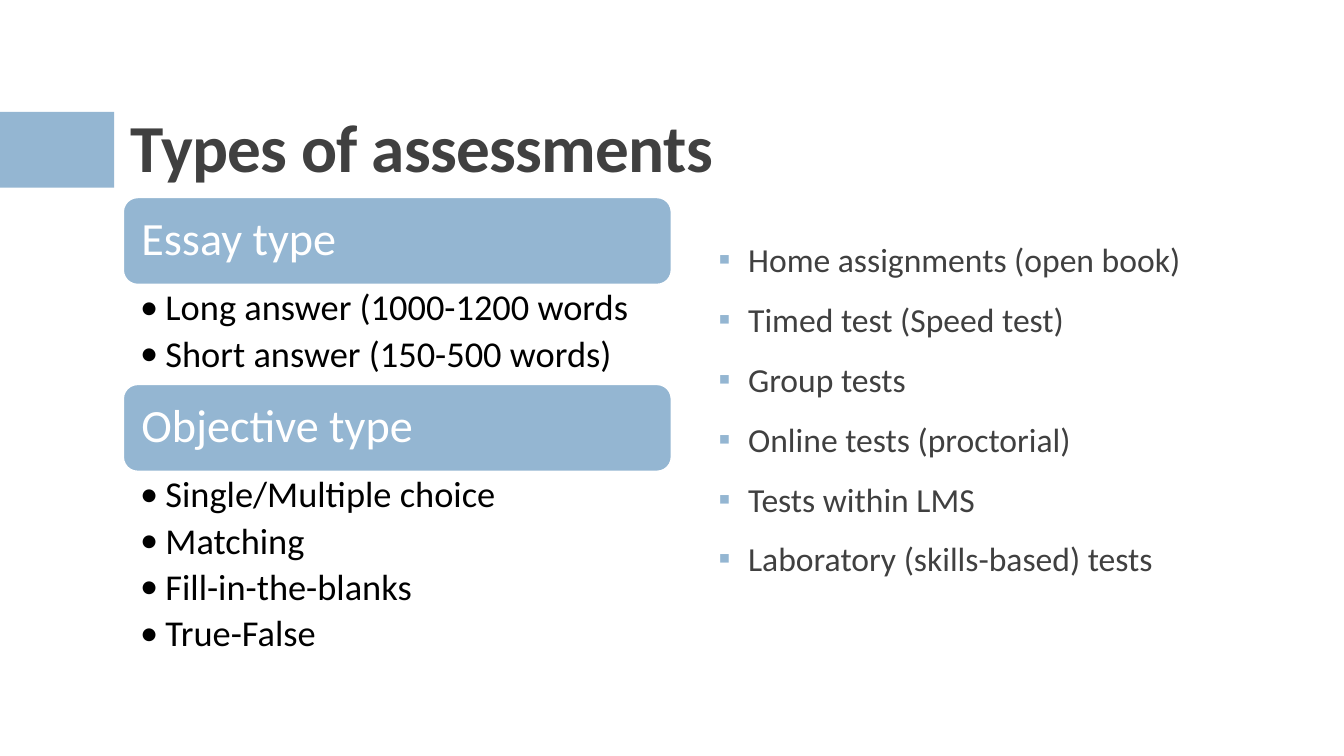
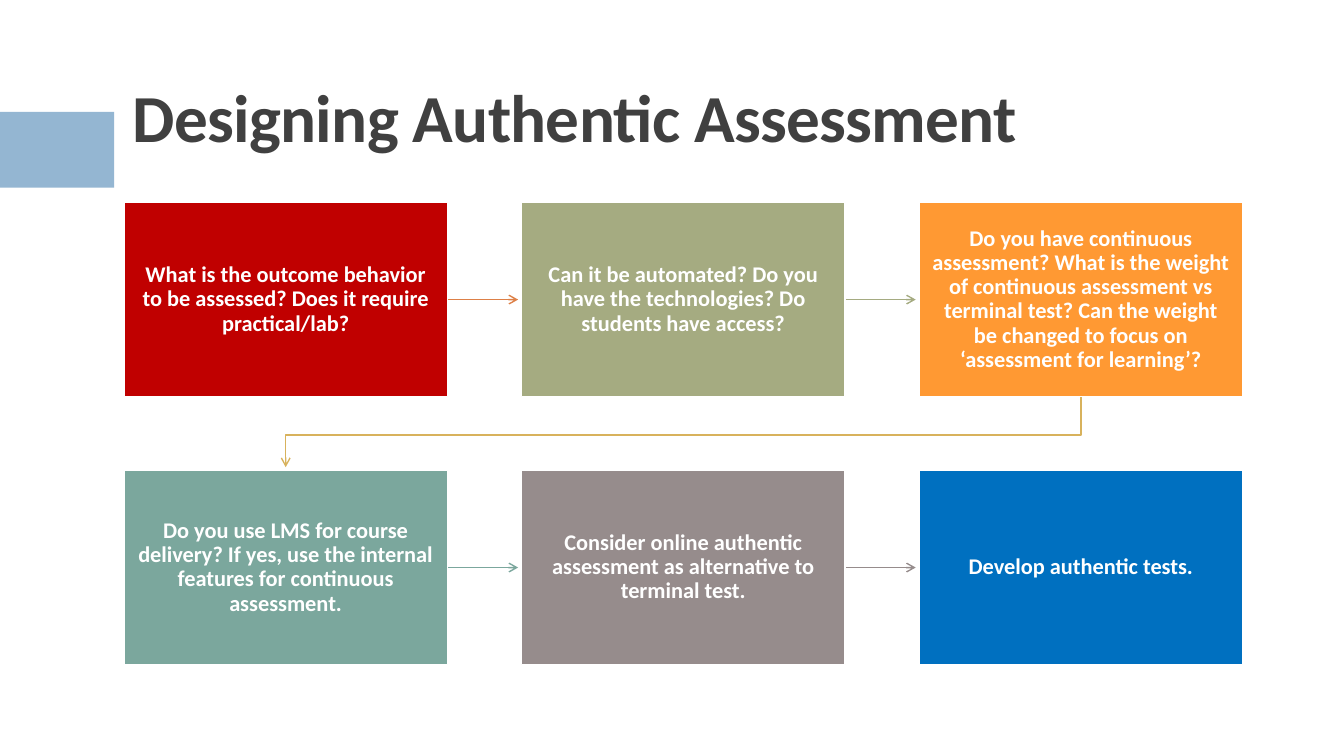
from pptx import Presentation
from pptx.dml.color import RGBColor
from pptx.enum.shapes import MSO_CONNECTOR, MSO_SHAPE
from pptx.enum.text import MSO_ANCHOR, PP_ALIGN
from pptx.oxml.ns import qn
from pptx.util import Pt
from lxml.etree import SubElement

WHITE = RGBColor(0xFF, 0xFF, 0xFF)
BLACK = RGBColor(0x00, 0x00, 0x00)
DARK = RGBColor(0x40, 0x40, 0x40)
BLUE = RGBColor(0x94, 0xB6, 0xD2)
RED = RGBColor(0xC0, 0x00, 0x00)
RUST = RGBColor(0xDD, 0x80, 0x47)
OLIVE = RGBColor(0xA5, 0xAB, 0x81)
ORANGE = RGBColor(0xFF, 0x99, 0x33)
GOLD = RGBColor(0xD8, 0xB2, 0x5C)
TEAL = RGBColor(0x7B, 0xA7, 0x9D)
GREY = RGBColor(0x96, 0x8C, 0x8C)
ROYAL = RGBColor(0x00, 0x70, 0xC0)


class Deck:
    font = "Calibri"

    def __init__(self):
        self.prs = Presentation()
        self.prs.slide_width, self.prs.slide_height = Pt(960), Pt(540)
        self.slide = None

    def page(self, title, left, top, width, height):
        """Start a slide with the side band and a title."""
        self.slide = self.prs.slides.add_slide(self.prs.slide_layouts[6])
        self.block(MSO_SHAPE.RECTANGLE, (0, 80, 81.5, 54), BLUE)
        frame = self.box((left, top, width, height), (7.2, 3.6, 7.2, 3.6))
        frame.vertical_anchor = MSO_ANCHOR.BOTTOM
        frame.text = title
        para = frame.paragraphs[0]
        para.line_spacing = 0.9
        self.style(para, 48, DARK, True)
        for run in para.runs:
            run._r.get_or_add_rPr().set("spc", "-50")

    def style(self, para, size, color, bold=False):
        for run in para.runs:
            font = run.font
            font.name, font.size, font.bold = self.font, Pt(size), bold
            font.color.rgb = color

    def inset(self, frame, pads):
        frame.word_wrap = True
        (frame.margin_left, frame.margin_top,
         frame.margin_right, frame.margin_bottom) = map(Pt, pads)

    def box(self, place, pads):
        frame = self.slide.shapes.add_textbox(*map(Pt, place)).text_frame
        self.inset(frame, pads)
        return frame

    def block(self, kind, place, fill, edge=None):
        shape = self.slide.shapes.add_shape(kind, *map(Pt, place))
        shape.shadow.inherit = False
        shape.fill.solid()
        shape.fill.fore_color.rgb = fill
        if edge is None:
            shape.line.fill.background()
        else:
            shape.line.color.rgb = edge
            shape.line.width = Pt(1.25)
        return shape

    def card(self, kind, place, fill, text, size, pad, align, bold=False):
        """Filled block with one white paragraph."""
        frame = self.block(kind, place, fill, WHITE).text_frame
        self.inset(frame, [pad] * 4)
        frame.vertical_anchor = MSO_ANCHOR.MIDDLE
        frame.text = text
        para = frame.paragraphs[0]
        para.alignment, para.line_spacing = align, 0.9
        self.style(para, size, WHITE, bold)

    def bullets(self, place, pads, items, size, color, mark, indent,
                tint=None, lead=1.0, before=0, after=0):
        frame = self.box(place, pads)
        frame.text = "\n".join(items)
        for i, para in enumerate(frame.paragraphs):
            para.line_spacing = lead
            para.space_before = Pt(before if i else 0)
            para.space_after = Pt(after)
            props = para._p.get_or_add_pPr()
            props.set("marL", str(Pt(indent)))
            props.set("indent", str(-Pt(indent)))
            if tint is not None:
                hue = SubElement(props, qn("a:buClr"))
                SubElement(hue, qn("a:srgbClr"), val=str(tint))
            SubElement(props, qn("a:buFont"), typeface=self.font)
            SubElement(props, qn("a:buChar"), char=mark)
            self.style(para, size, color)

    def arrow(self, points, color):
        """Straight connector for two points, open outline for more."""
        spots = [(Pt(x), Pt(y)) for x, y in points]
        shapes = self.slide.shapes
        if len(spots) == 2:
            link = shapes.add_connector(MSO_CONNECTOR.STRAIGHT, *spots[0], *spots[1])
            SubElement(link._element.spPr, qn("a:effectLst"))
        else:
            pen = shapes.build_freeform(*spots[0])
            pen.add_line_segments(spots[1:], close=False)
            link = pen.convert_to_shape()
            link.shadow.inherit = False
            link.fill.background()
        link.line.color.rgb = color
        link.line.width = Pt(1)
        SubElement(link.line._get_or_add_ln(), qn("a:tailEnd"), type="arrow")


def types(deck):
    deck.page("Types of assessments", 86.4, 22.3, 792, 114.5)

    # Headed lists
    groups = [
        (141, "Essay type",
         ["Long answer (1000-1200 words", "Short answer (150-500 words)"]),
        (274.5, "Objective type",
         ["Single/Multiple choice", "Matching", "Fill-in-the-blanks", "True-False"]),
    ]
    left, wide, tall = 88, 391.7, 62.3
    for top, head, items in groups:
        deck.card(MSO_SHAPE.ROUNDED_RECTANGLE, (left, top, wide, tall), BLUE,
                  head, 33, 10, PP_ALIGN.LEFT)
        deck.bullets((left, top + tall, wide, 35.6 * len(items)),
                     (12.2, 3.6, 18.7, 3.6), items, 26, BLACK, "•", 18,
                     lead=0.9, after=5)

    # Test formats
    deck.bullets((513.4, 167, 365, 295), (0, 3.6, 0, 3.6),
                 ["Home assignments (open book)", "Timed test (Speed test)",
                  "Group tests", "Online tests (proctorial)",
                  "Tests within LMS", "Laboratory (skills-based) tests"],
                 24, DARK, "▪", 21, tint=BLUE, before=12, after=2)


def design(deck):
    deck.page("Designing Authentic Assessment", 87.8, 5.8, 800, 110.2)

    # Steps: card fill, colour of the arrow that leaves it, text
    steps = [
        (RED, RUST, "What is the outcome behavior to be assessed? "
                    "Does it require practical/lab?"),
        (OLIVE, OLIVE, "Can it be automated? Do you have the technologies? "
                       "Do students have access?"),
        (ORANGE, GOLD, "Do you have continuous assessment? What is the weight of "
                       "continuous assessment vs terminal test? Can the weight be "
                       "changed to focus on ‘assessment for learning’?"),
        (TEAL, TEAL, "Do you use LMS for course delivery? If yes, use the internal "
                     "features for continuous assessment."),
        (GREY, GREY, "Consider online authentic assessment as alternative to "
                     "terminal test."),
        (ROYAL, None, "Develop authentic tests."),
    ]
    cols, left, top = 3, 88.5, 144.7
    wide, tall, gap, short = 231.2, 138.6, 52.8, 2.4
    for i, (fill, tint, text) in enumerate(steps):
        row, col = divmod(i, cols)
        x, y = left + col * (wide + gap), top + row * (tall + gap)
        end, mid = y + tall, y + tall / 2
        if tint is not None and col < cols - 1:
            deck.arrow([(x + wide, mid), (x + wide + gap - short, mid)], tint)
        elif tint is not None:
            near, far = x + wide / 2, left + wide / 2
            turn = end + gap / 2 + 1
            deck.arrow([(near, end), (near, turn), (far, turn),
                        (far, end + gap - short)], tint)
        deck.card(MSO_SHAPE.RECTANGLE, (x, y, wide, tall), fill, text, 16, 8.64,
                  PP_ALIGN.CENTER, True)


def main():
    deck = Deck()
    types(deck)
    design(deck)
    deck.prs.save("out.pptx")


if __name__ == "__main__":
    main()
